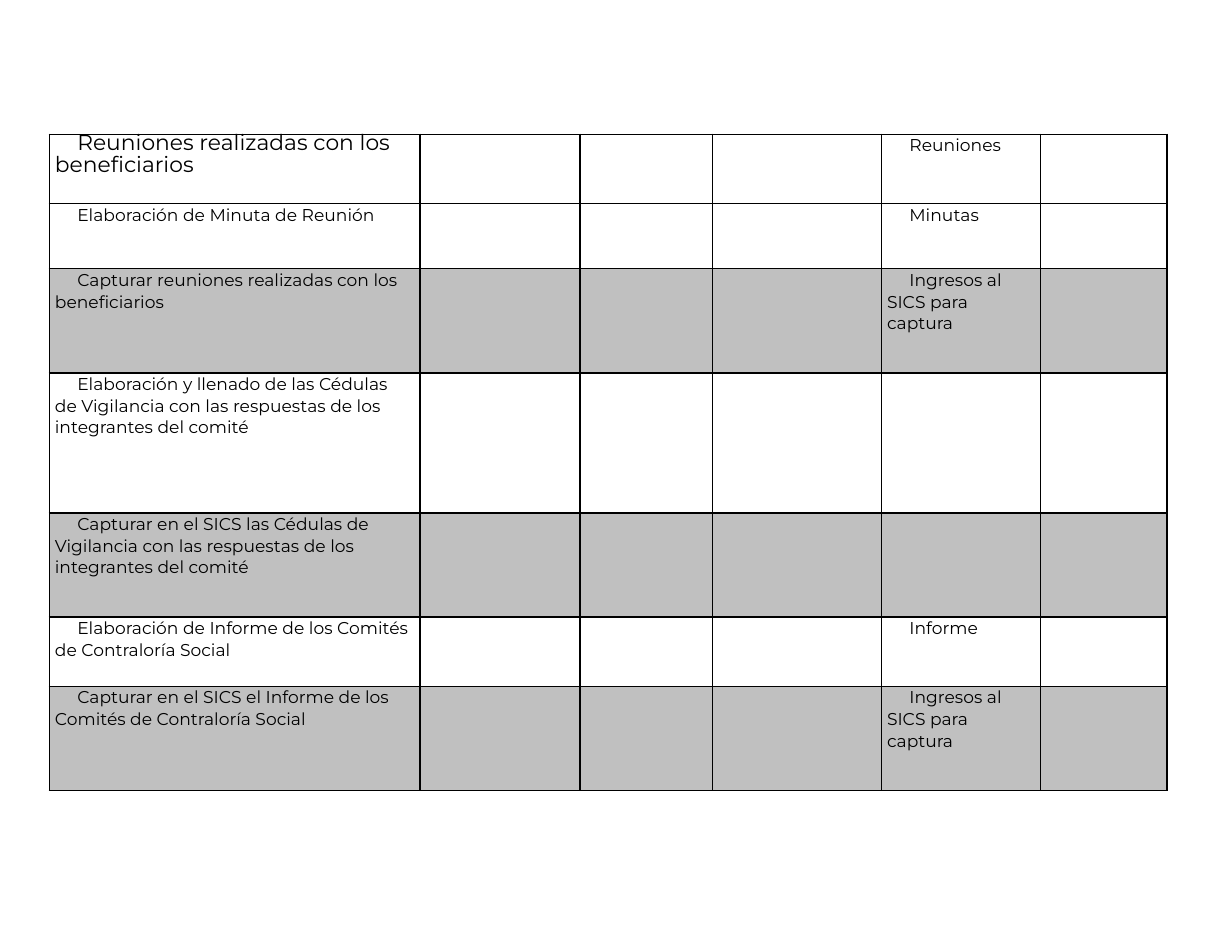
from lxml import etree
from pptx import Presentation
from pptx.dml.color import RGBColor as RGB
from pptx.oxml.ns import qn
from pptx.util import Inches, Pt

COLORS = {"text": "000000", "border": "000000", "capture": "C0C0C0"}
WIDTHS = [3.31, 1.43, 1.18, 1.51, 1.42, 1.13]
UNIT_COL = 4
CAPTURE = "Ingresos al SICS para captura"
ROWS = [
    (0.62, "Reuniones realizadas con los beneficiarios", "Reuniones", False),
    (0.58, "Elaboración de Minuta de Reunión", "Minutas", False),
    (0.93, "Capturar reuniones realizadas con los beneficiarios", CAPTURE, True),
    (1.25, "Elaboración y llenado de las Cédulas de Vigilancia con las "
           "respuestas de los integrantes del comité", "", False),
    (0.93, "Capturar en el SICS las Cédulas de Vigilancia con las "
           "respuestas de los integrantes del comité", "", True),
    (0.62, "Elaboración de Informe de los Comités de Contraloría Social",
     "Informe", False),
    (0.93, "Capturar en el SICS el Informe de los Comités de Contraloría Social",
     CAPTURE, True),
]
MARGINS = {"margin_left": Inches(0.05), "margin_right": Inches(0.05),
           "margin_top": 0, "margin_bottom": 0}
PARAGRAPH = {"line_spacing": Pt(14), "space_after": Pt(5)}


def add_borders(cell):
    tcPr = cell._tc.get_or_add_tcPr()
    for side in ("lnL", "lnR", "lnT", "lnB"):
        ln = etree.SubElement(tcPr, qn(f"a:{side}"), w=str(Pt(1)))
        fill = etree.SubElement(ln, qn("a:solidFill"))
        etree.SubElement(fill, qn("a:srgbClr"), val=COLORS["border"])


def write(cell, text, size):
    p = cell.text_frame.paragraphs[0]
    for name, value in PARAGRAPH.items():
        setattr(p, name, value)
    p._p.get_or_add_pPr().set("indent", str(Inches(0.2)))
    r = p.add_run()
    r.text = text
    r.font.name = "Montserrat"
    r.font.size = Pt(size)
    r.font.color.rgb = RGB.from_string(COLORS["text"])


prs = Presentation()
prs.slide_width, prs.slide_height = Inches(11), Inches(8.5)
s = prs.slides.add_slide(prs.slide_layouts[6])

table = s.shapes.add_table(len(ROWS), len(WIDTHS), Inches(0.44), Inches(1.2),
                           Inches(sum(WIDTHS)),
                           Inches(sum(row[0] for row in ROWS))).table
table.first_row = table.horz_banding = False
for col, width in zip(table.columns, WIDTHS):
    col.width = Inches(width)

for i, (height, activity, unit, shaded) in enumerate(ROWS):
    table.rows[i].height = Inches(height)
    for j in range(len(WIDTHS)):
        cell = table.cell(i, j)
        for name, value in MARGINS.items():
            setattr(cell, name, value)
        add_borders(cell)
        if shaded:
            cell.fill.solid()
            cell.fill.fore_color.rgb = RGB.from_string(COLORS["capture"])
        else:
            cell.fill.background()
    write(table.cell(i, 0), activity, 14 if i == 0 else 11)
    if unit:
        write(table.cell(i, UNIT_COL), unit, 11)

prs.save("out.pptx")
